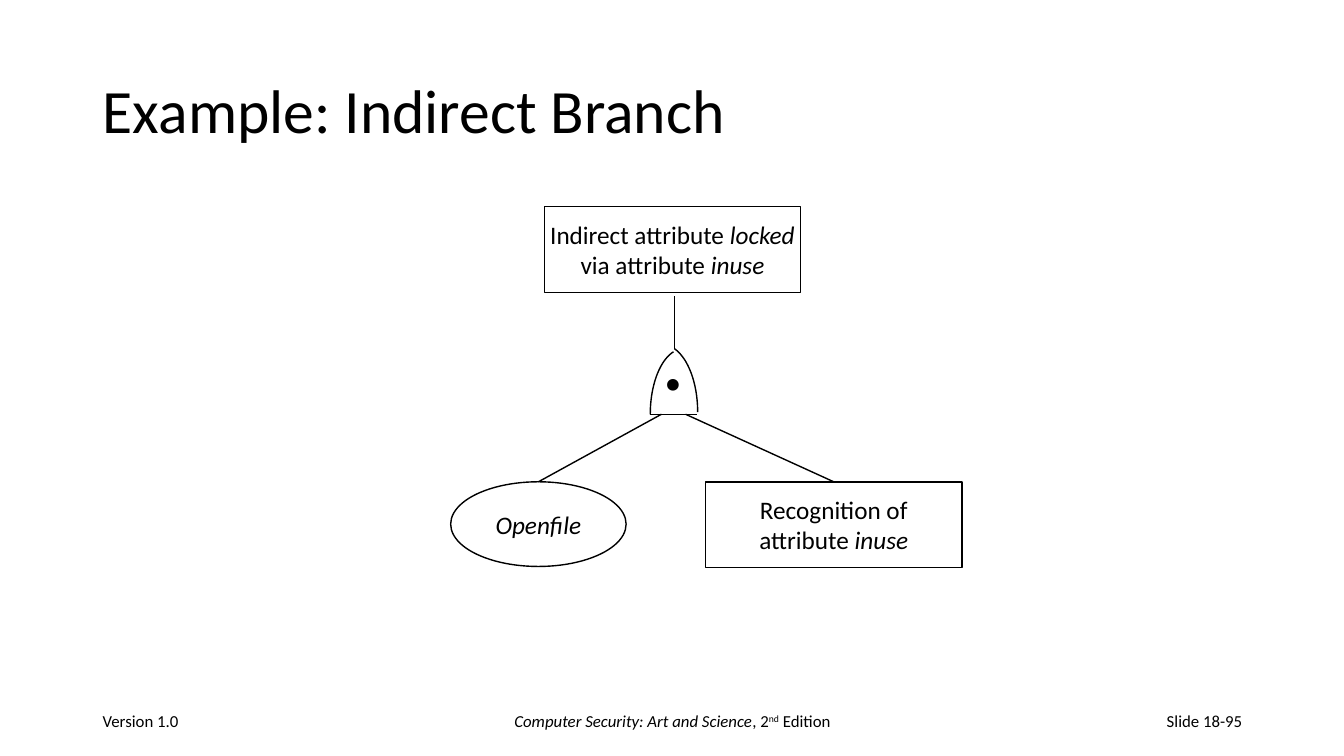
import pptx
import pptx.dml.color
import pptx.enum.shapes
import pptx.enum.text
import pptx.oxml.ns
import pptx.util
from lxml import etree
from pptx.util import Inches

COLOURS = {"ink": "000000"}
ALIGN = pptx.enum.text.PP_ALIGN
SHAPES = pptx.enum.shapes.MSO_SHAPE
MIDDLE = pptx.enum.text.MSO_ANCHOR.MIDDLE
PLAIN, ITALIC = {}, {"italic": True}
LABEL_SIZE, FOOTER_SIZE, TITLE_SIZE = 18, 12, 44
CURVE_STEPS = 24


def colour(name):
    return pptx.dml.color.RGBColor.from_string(COLOURS[name])


def set_values(target, values):
    for name, value in values.items():
        setattr(target, name, value)


def write_text(frame, lines, size, align, **paragraph_format):
    """Fill a frame with lines, each a list of (text, font values) spans."""
    for number, line in enumerate(lines):
        para = frame.add_paragraph() if number else frame.paragraphs[0]
        set_values(para, {"alignment": align, **paragraph_format})
        for text, font_values in line:
            span = para.add_run()
            span.text = text
            set_values(span.font, {"name": "Calibri", "size": pptx.util.Pt(size), **font_values})
            span.font.color.rgb = colour("ink")


def outline(item):
    item.line.color.rgb = colour("ink")
    item.line.width = pptx.util.Pt(1)


def add_text(page, place, lines, size, align):
    box = page.shapes.add_textbox(*map(Inches, place))
    set_values(box.text_frame, {"word_wrap": True, "vertical_anchor": MIDDLE})
    write_text(box.text_frame, lines, size, align)
    return box


def add_node(page, preset, place, lines):
    node = page.shapes.add_shape(preset, *map(Inches, place))
    node.shadow.inherit = False
    node.fill.background()
    outline(node)
    set_values(node.text_frame, {"word_wrap": False, "vertical_anchor": MIDDLE})
    write_text(node.text_frame, lines, LABEL_SIZE, ALIGN.CENTER)
    return node


def add_line(page, start, end, node=None):
    """Draw a straight line, joined to the top of node if one is given."""
    line = page.shapes.add_connector(
        pptx.enum.shapes.MSO_CONNECTOR.STRAIGHT, *map(Inches, start + end))
    outline(line)
    etree.SubElement(line._element.spPr, pptx.oxml.ns.qn("a:effectLst"))
    if node is not None:
        line.end_connect(node, 0)


def add_curve(page, *controls):
    """Draw an open cubic Bezier curve through four control points."""
    points = []
    for step in range(CURVE_STEPS + 1):
        t = step / CURVE_STEPS
        weights = ((1 - t) ** 3, 3 * t * (1 - t) ** 2, 3 * t ** 2 * (1 - t), t ** 3)
        points.append(tuple(
            Inches(sum(weight * value for weight, value in zip(weights, axis)))
            for axis in zip(*controls)))
    builder = page.shapes.build_freeform(*points[0])
    builder.add_line_segments(points[1:], close=False)
    curve = builder.convert_to_shape()
    curve.shadow.inherit = False
    curve.fill.background()
    outline(curve)


def add_and_gate(page):
    add_curve(page, (6.92, 4.09), (6.92, 3.81), (6.83, 3.56), (6.69, 3.46))
    add_curve(page, (6.45, 4.11), (6.45, 3.83), (6.54, 3.58), (6.68, 3.49))
    add_text(page, (6.5, 3.59, 0.35, 0.4), [[("●", PLAIN)]], LABEL_SIZE, ALIGN.LEFT)
    add_line(page, (6.45, 4.11), (6.91, 4.11))


def add_title(page, text):
    title = page.shapes.title
    set_values(title, dict(zip(("left", "top", "width", "height"),
                               map(Inches, (0.92, 0.4, 11.5, 1.45)))))
    title.text_frame.vertical_anchor = MIDDLE
    write_text(title.text_frame, [[(text, PLAIN)]], TITLE_SIZE, ALIGN.LEFT, line_spacing=0.9)


def add_footer(page):
    top, height = 6.95, 0.4
    add_text(page, (0.92, top, 3, height), [[("Version 1.0", PLAIN)]], FOOTER_SIZE, ALIGN.LEFT)
    book = add_text(page, (4.42, top, 4.5, height), [[
        ("Computer Security: Art and Science", ITALIC), (", 2", PLAIN),
        ("nd", PLAIN), (" Edition", PLAIN)]], FOOTER_SIZE, ALIGN.CENTER)
    ordinal = book.text_frame.paragraphs[0].runs[2]
    ordinal.font._element.set("baseline", "30000")
    add_text(page, (9.42, top, 3, height), [[("Slide 18-95", PLAIN)]], FOOTER_SIZE, ALIGN.RIGHT)


def main():
    deck = pptx.Presentation()
    deck.slide_width, deck.slide_height = Inches(13.33), Inches(7.5)
    page = deck.slides.add_slide(deck.slide_layouts[5])
    add_title(page, "Example: Indirect Branch")
    add_footer(page)

    add_node(page, SHAPES.RECTANGLE, (5.4, 2.05, 2.54, 0.85), [
        [("Indirect attribute ", PLAIN), ("locked", ITALIC)],
        [("via attribute ", PLAIN), ("inuse", ITALIC)]])
    openfile = add_node(page, SHAPES.OVAL, (4.47, 4.78, 1.74, 0.84), [[("Openfile", ITALIC)]])
    recognition = add_node(page, SHAPES.RECTANGLE, (7, 4.78, 2.54, 0.85), [
        [("Recognition of", PLAIN)],
        [("attribute ", PLAIN), ("inuse", ITALIC)]])

    add_and_gate(page)
    add_line(page, (6.69, 2.94), (6.69, 3.46))
    add_line(page, (6.56, 4.11), (5.34, 4.78), openfile)
    add_line(page, (6.8, 4.11), (8.27, 4.78), recognition)
    deck.save("out.pptx")


if __name__ == "__main__":
    main()
